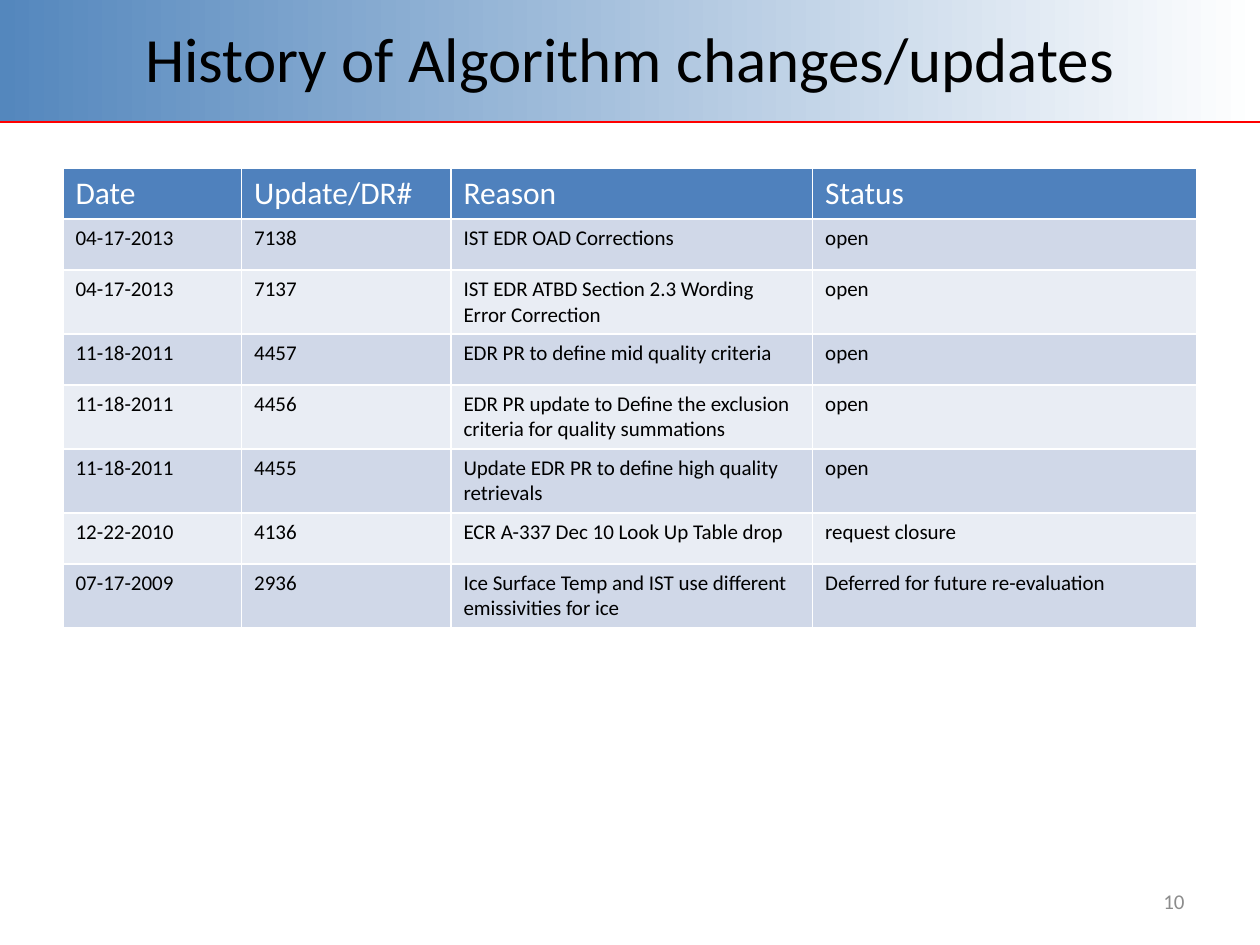
from dataclasses import dataclass

from lxml.etree import SubElement
from pptx import Presentation
from pptx.dml.color import RGBColor
from pptx.enum.shapes import MSO_CONNECTOR as Connector, MSO_SHAPE as Shape
from pptx.enum.text import MSO_ANCHOR as Anchor, PP_ALIGN as Align
from pptx.oxml.ns import qn
from pptx.slide import Slide
from pptx.util import Pt

BLACK = RGBColor(0x00, 0x00, 0x00)
WHITE = RGBColor(0xFF, 0xFF, 0xFF)
GRAY = RGBColor(0x8C, 0x8C, 0x8C)
RED = RGBColor(0xFF, 0x00, 0x00)
BAND_BLUE = RGBColor(0x54, 0x87, 0xBD)
HEADER_BLUE = RGBColor(0x4F, 0x81, 0xBD)
ROW_FILLS = RGBColor(0xD0, 0xD8, 0xE8), RGBColor(0xE9, 0xED, 0xF4)

COLUMN_WIDTHS = 102.1, 119.6, 206.7, 219.6
ROW_HEIGHT = 29.2
HEADER = "Date", "Update/DR#", "Reason", "Status"
UPDATES = [
    ("04-17-2013", "7138", "IST EDR OAD Corrections", "open"),
    ("04-17-2013", "7137", "IST EDR ATBD Section 2.3 Wording Error Correction", "open"),
    ("11-18-2011", "4457", "EDR PR to define mid quality criteria", "open"),
    ("11-18-2011", "4456",
     "EDR PR update to Define the exclusion criteria for quality summations", "open"),
    ("11-18-2011", "4455", "Update EDR PR to define high quality retrievals", "open"),
    ("12-22-2010", "4136", "ECR A-337 Dec 10 Look Up Table drop", "request closure"),
    ("07-17-2009", "2936", "Ice Surface Temp and IST use different emissivities for ice",
     "Deferred for future re-evaluation"),
]


def write(frame, text, size=12, color=BLACK, align=Align.LEFT, font="Calibri"):
    """Put one formatted paragraph in a text frame."""
    para = frame.paragraphs[0]
    para.alignment = align
    span = para.add_run()
    span.text = text
    span.font.name = font
    span.font.size = Pt(size)
    span.font.bold = False
    span.font.color.rgb = color


@dataclass
class Page:
    """Draws styled elements on the current slide."""

    slide: Slide
    font: str = "Calibri"

    def band(self, left, top, width, height):
        """Add the gradient band behind the title."""
        box = self.slide.shapes.add_shape(
            Shape.RECTANGLE, Pt(left), Pt(top), Pt(width), Pt(height))
        box.shadow.inherit = False
        box.line.fill.background()
        box.fill.gradient()
        box.fill.gradient_angle = 0
        for stop, color, position in zip(box.fill.gradient_stops, (BAND_BLUE, WHITE), (0, 1)):
            stop.color.rgb = color
            stop.position = position

    def rule(self, left, top, width):
        """Add a horizontal red line."""
        line = self.slide.shapes.add_connector(
            Connector.STRAIGHT, Pt(left), Pt(top), Pt(left + width), Pt(top))
        line.line.color.rgb = RED
        line.line.width = Pt(1.25)
        SubElement(line._element.spPr, qn("a:effectLst"))

    def title(self, text, left, top, width, height):
        """Fill the title placeholder and bring it to the front."""
        box = self.slide.shapes.title
        box.left, box.top, box.width, box.height = Pt(left), Pt(top), Pt(width), Pt(height)
        box.text_frame.vertical_anchor = Anchor.MIDDLE
        write(box.text_frame, text, size=36, align=Align.CENTER, font=self.font)
        self.slide.shapes._spTree.append(box._element)

    def table(self, rows, left, top):
        """Add a table with a header row and banded body rows."""
        table = self.slide.shapes.add_table(
            len(rows), len(COLUMN_WIDTHS), Pt(left), Pt(top),
            Pt(sum(COLUMN_WIDTHS)), Pt(ROW_HEIGHT * len(rows))).table
        for column, width in zip(table.columns, COLUMN_WIDTHS):
            column.width = Pt(width)
        for index, (row, texts) in enumerate(zip(table.rows, rows)):
            row.height = Pt(ROW_HEIGHT)
            is_header = index == 0
            for cell, text in zip(row.cells, texts):
                cell.fill.solid()
                cell.fill.fore_color.rgb = HEADER_BLUE if is_header else ROW_FILLS[(index - 1) % 2]
                write(cell.text_frame, text, size=18 if is_header else 12,
                      color=WHITE if is_header else BLACK, font=self.font)

    def number(self, text, left, top, width, height):
        """Add the page number."""
        frame = self.slide.shapes.add_textbox(
            Pt(left), Pt(top), Pt(width), Pt(height)).text_frame
        frame.word_wrap = True
        frame.vertical_anchor = Anchor.MIDDLE
        write(frame, text, color=GRAY, align=Align.RIGHT, font=self.font)


def main():
    """Build and save the slide."""
    deck = Presentation()
    deck.slide_width, deck.slide_height = Pt(720), Pt(540)
    page = Page(deck.slides.add_slide(deck.slide_layouts[5]))
    page.band(0, -0.7, 720, 70)
    page.rule(0, 69.6, 720)
    page.title("History of Algorithm changes/updates", 36, 0, 648, 65)
    page.table([HEADER, *UPDATES], 36, 96)
    page.number("10", 516, 500.5, 168, 28.75)
    deck.save("out.pptx")


if __name__ == "__main__":
    main()
